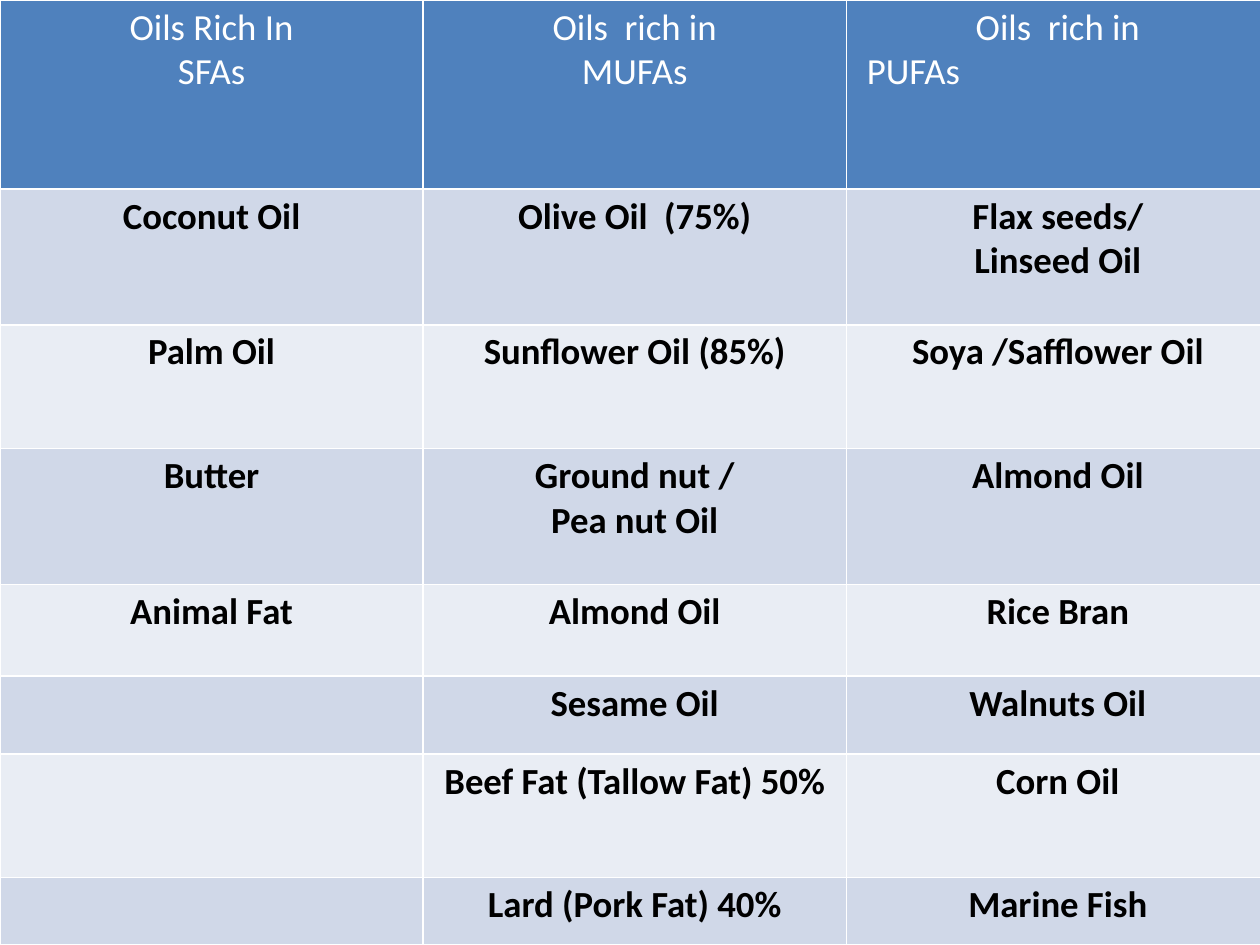
from pptx import Presentation
from pptx.dml.color import RGBColor
from pptx.enum.text import PP_ALIGN
from pptx.oxml import parse_xml
from pptx.oxml.ns import nsdecls
from pptx.util import Cm, Pt

COLUMN_WIDTH = 8.53
ROW_HEIGHTS = [3.81, 2.74, 2.49, 2.74, 1.85, 1.57, 2.49, 1.36]
OILS = [
    ["Oils Rich In\nSFAs", "Oils  rich in\nMUFAs", "Oils  rich in\n PUFAs"],
    ["Coconut Oil", "Olive Oil  (75%)", "Flax seeds/\nLinseed Oil"],
    ["Palm Oil", "Sunflower Oil (85%)", "Soya /Safflower Oil"],
    ["Butter", "Ground nut /\nPea nut Oil", "Almond Oil"],
    ["Animal Fat", "Almond Oil", "Rice Bran"],
    ["", "Sesame Oil", "Walnuts Oil"],
    ["", "Beef Fat (Tallow Fat) 50%", "Corn Oil"],
    ["", "Lard (Pork Fat) 40%", "Marine Fish"],
]
MARGINS = {
    "margin_left": Cm(0.25),
    "margin_right": Cm(0.25),
    "margin_top": Cm(0.1),
    "margin_bottom": Cm(0.1),
}
HEADER = {"fill": "4F81BD", "color": "FFFFFF", "bold": False}
BANDS = [
    {"fill": "E9EDF4", "color": "000000", "bold": True},
    {"fill": "D0D8E8", "color": "000000", "bold": True},
]


def rgb(value):
    return RGBColor.from_string(value)


def set_values(target, values):
    for name, value in values.items():
        setattr(target, name, value)


def add_borders(cell, color, width):
    properties = cell._tc.get_or_add_tcPr()
    for position, side in enumerate("LRTB"):
        border = parse_xml(
            f'<a:ln{side} {nsdecls("a")} w="{Pt(width)}">'
            f'<a:solidFill><a:srgbClr val="{color}"/></a:solidFill></a:ln{side}>'
        )
        properties.insert(position, border)


def write_text(cell, text, style):
    cell.text_frame.text = text
    for para in cell.text_frame.paragraphs:
        para.alignment = PP_ALIGN.CENTER
        for span in para.runs:
            set_values(span.font, {"name": "Calibri", "size": Pt(21), "bold": style["bold"]})
            span.font.color.rgb = rgb(style["color"])


def format_cell(cell, text, style):
    set_values(cell, MARGINS)
    cell.fill.solid()
    cell.fill.fore_color.rgb = rgb(style["fill"])
    add_borders(cell, "FFFFFF", 1)
    if text:
        write_text(cell, text, style)


def add_oil_table(page):
    column_count = len(OILS[0])
    table = page.shapes.add_table(
        len(OILS), column_count, Cm(0), Cm(0),
        Cm(COLUMN_WIDTH * column_count), Cm(sum(ROW_HEIGHTS)),
    ).table
    for column in table.columns:
        column.width = Cm(COLUMN_WIDTH)
    for index, texts in enumerate(OILS):
        table.rows[index].height = Cm(ROW_HEIGHTS[index])
        style = BANDS[index % 2] if index else HEADER
        for column, text in enumerate(texts):
            format_cell(table.cell(index, column), text, style)
    return table


def main():
    deck = Presentation()
    set_values(deck, {"slide_width": Cm(25.4), "slide_height": Cm(19.05)})
    page = deck.slides.add_slide(deck.slide_layouts[6])

    # Table of oils by fatty acid type
    table = add_oil_table(page)

    # The last heading's second line sits at the left
    table.cell(0, 2).text_frame.paragraphs[1].alignment = PP_ALIGN.LEFT

    deck.save("out.pptx")


if __name__ == "__main__":
    main()
